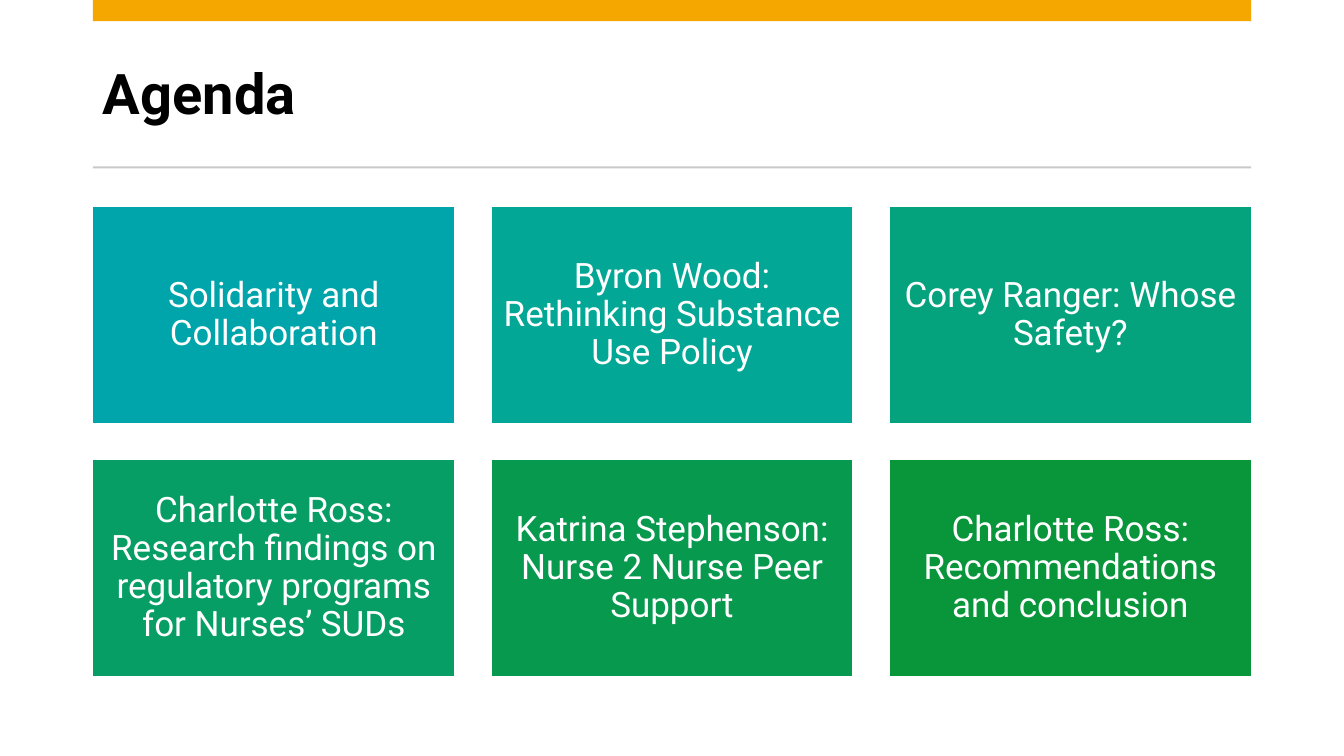
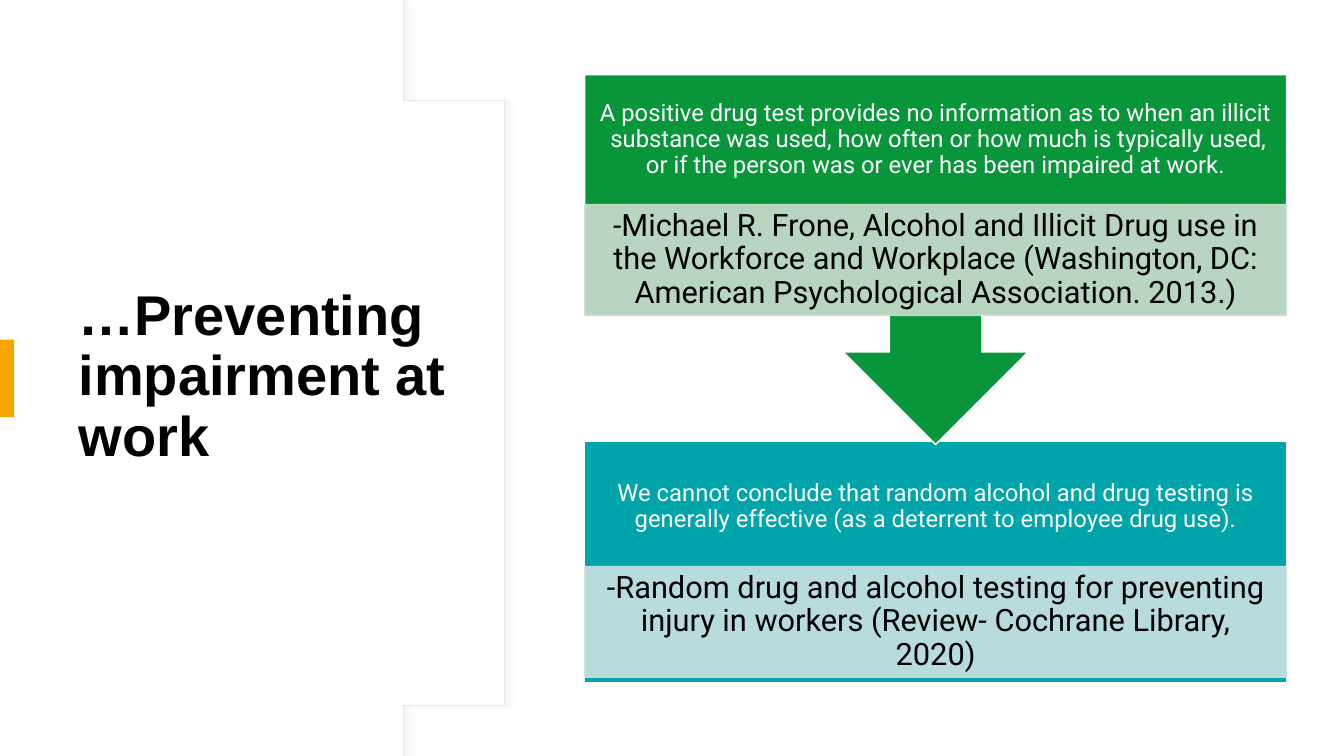
from dataclasses import dataclass

from lxml import etree
from pptx import Presentation
from pptx import util as u
from pptx.dml.color import RGBColor
from pptx.enum import shapes, text
from pptx.oxml import ns


@dataclass(frozen=True)
class Theme:
    white: str = "FFFFFF"
    ink: str = "000000"
    accent: str = "F5A700"
    rule: str = "C9C9C9"
    outline: str = "E9E9E9"
    shadow: str = "D9D9D9"
    teal: str = "00A5AB"
    green: str = "09963B"
    pale_teal: str = "CCE1E2"
    pale_green: str = "CCDDCE"
    body_font: str = "Roboto"
    title_font: str = "Arial"
    title_size: int = 40
    card_size: int = 25
    source_size: int = 22
    claim_size: int = 17
    spacing: float = 0.9


@dataclass(frozen=True)
class Box:
    left: float
    top: float
    width: float
    height: float

    def inches(self) -> tuple:
        return tuple(u.Inches(n) for n in (self.left, self.top, self.width, self.height))


@dataclass(frozen=True)
class Grid:
    left: float
    top: float
    width: float
    height: float
    gap: float
    columns: int

    def cell(self, index: int) -> Box:
        row, column = divmod(index, self.columns)
        return Box(
            self.left + column * (self.width + self.gap),
            self.top + row * (self.height + self.gap),
            self.width,
            self.height,
        )


@dataclass(frozen=True)
class Run:
    words: str
    italic: bool = False


@dataclass(frozen=True)
class Card:
    words: str
    fill: str


@dataclass(frozen=True)
class Panel:
    preset: shapes.MSO_SHAPE
    rotation: int
    top: float
    height: float
    source_top: float
    fill: str
    pale: str
    claim: str
    source: tuple


THEME = Theme()
WIDTH, HEIGHT = 13.33, 7.5
MARGIN, CONTENT = 0.92, 11.49
CARD_GRID = Grid(MARGIN, 2.05, 3.59, 2.15, 0.36, 3)
PANEL_LEFT, PANEL_WIDTH = 5.8, 6.96
CLAIM_HEIGHT, SOURCE_HEIGHT = 1.29, 1.1

CARDS = (
    Card("Solidarity and Collaboration", THEME.teal),
    Card("Byron Wood: Rethinking Substance Use Policy", "02A796"),
    Card("Corey Ranger: Whose Safety?", "04A27D"),
    Card("Charlotte Ross: Research findings on regulatory programs for Nurses’ SUDs", "069E65"),
    Card("Katrina Stephenson: Nurse 2 Nurse Peer Support", "079A4F"),
    Card("Charlotte Ross: Recommendations and conclusion", THEME.green),
)

PANELS = (
    Panel(
        shapes.MSO_SHAPE.RECTANGLE, 0, 4.38, 2.39, 5.62, THEME.teal, THEME.pale_teal,
        "We cannot conclude that random alcohol and drug testing is generally effective "
        "(as a deterrent to employee drug use).",
        (Run("-Random drug and alcohol testing for preventing injury in workers "
             "(Review- Cochrane Library, 2020)"),),
    ),
    Panel(
        shapes.MSO_SHAPE.UP_ARROW_CALLOUT, 180, 0.74, 3.67, 2.03, THEME.green, THEME.pale_green,
        "A positive drug test provides no information as to when an illicit  substance was used, "
        "how often or how much is typically used, or if the person was or ever has been "
        "impaired at work.",
        (Run("-", True),
         Run("Michael R. Frone, Alcohol and Illicit Drug use in the Workforce and Workplace "
             "(Washington, DC: American Psychological Association. 2013.)")),
    ),
)


def rgb(value: str) -> RGBColor:
    return RGBColor.from_string(value)


def paint(shape, fill: str, line: str | None = None, weight: float = 1) -> None:
    shape.fill.solid()
    shape.fill.fore_color.rgb = rgb(fill)
    if line:
        shape.line.color.rgb = rgb(line)
        shape.line.width = u.Pt(weight)
    else:
        shape.line.fill.background()
    shape.shadow.inherit = False


def set_opacity(shape, percent: int) -> None:
    for color in shape.element.spPr.iter(ns.qn("a:srgbClr")):
        etree.SubElement(color, ns.qn("a:alpha"), val=str(percent * 1000))


def add_soft_shadow(shape) -> None:
    effects = shape.element.spPr.find(ns.qn("a:effectLst"))
    shadow = etree.SubElement(
        effects, ns.qn("a:outerShdw"),
        blurRad=str(u.Pt(4)), dist=str(u.Pt(3)), dir="0", algn="l", rotWithShape="0",
    )
    color = etree.SubElement(shadow, ns.qn("a:srgbClr"), val=THEME.shadow)
    etree.SubElement(color, ns.qn("a:alpha"), val="30000")


def add_block(slide, box: Box, fill: str, line: str | None = None,
              preset: shapes.MSO_SHAPE = shapes.MSO_SHAPE.RECTANGLE):
    shape = slide.shapes.add_shape(preset, *box.inches())
    paint(shape, fill, line)
    return shape


def write(shape, runs: tuple, size: int, color: str, font: str = THEME.body_font,
          inset: tuple = (0.1, 0.1), align: text.PP_ALIGN = text.PP_ALIGN.CENTER,
          bold: bool = False) -> None:
    frame = shape.text_frame
    frame.word_wrap = True
    frame.auto_size = text.MSO_AUTO_SIZE.NONE
    frame.vertical_anchor = text.MSO_ANCHOR.MIDDLE
    frame.margin_left = frame.margin_right = u.Inches(inset[0])
    frame.margin_top = frame.margin_bottom = u.Inches(inset[1])
    paragraph = frame.paragraphs[0]
    paragraph.alignment = align
    paragraph.line_spacing = THEME.spacing
    for part in runs:
        run = paragraph.add_run()
        run.text = part.words
        run.font.name = font
        run.font.size = u.Pt(size)
        run.font.bold = bold
        run.font.italic = part.italic
        run.font.color.rgb = rgb(color)


def add_title(slide, words: str, box: Box, font: str) -> None:
    title = slide.shapes.title
    title.left, title.top, title.width, title.height = box.inches()
    write(title, (Run(words),), THEME.title_size, THEME.ink, font,
          (0.1, 0.05), text.PP_ALIGN.LEFT, True)
    title.element.getparent().append(title.element)


def curve(start: tuple, first: tuple, second: tuple, end: tuple, steps: int = 40) -> list:
    points = []
    for step in range(1, steps + 1):
        t = step / steps
        weights = ((1 - t) ** 3, 3 * t * (1 - t) ** 2, 3 * t * t * (1 - t), t ** 3)
        corners = (start, first, second, end)
        points.append(tuple(sum(w * c[axis] for w, c in zip(weights, corners)) for axis in (0, 1)))
    return points


def add_arc_field(slide) -> None:
    middle = HEIGHT / 2
    shoulder, peak = (4.01, 0.08), (5.27, middle)
    upper = [(3.94, 0), shoulder, *curve(shoulder, (4.79, 1.02), (5.27, 2.32), peak)]
    lower = [(x, HEIGHT - y) for x, y in reversed(upper[:-1])]
    builder = slide.shapes.build_freeform(0, 0, scale=float(u.Inches(1)))
    builder.add_line_segments([*upper, *lower, (0, HEIGHT)], close=True)
    field = builder.convert_to_shape()
    paint(field, THEME.white, THEME.outline, 0.75)
    add_soft_shadow(field)


def add_panel(slide, panel: Panel) -> None:
    frame = Box(PANEL_LEFT, panel.top, PANEL_WIDTH, panel.height)
    add_block(slide, frame, panel.fill, THEME.white, panel.preset).rotation = panel.rotation
    claim_box = Box(PANEL_LEFT, panel.top, PANEL_WIDTH, CLAIM_HEIGHT)
    claim = slide.shapes.add_textbox(*claim_box.inches())
    write(claim, (Run(panel.claim),), THEME.claim_size, THEME.white, inset=(0.13, 0.13))
    source_box = Box(PANEL_LEFT, panel.source_top, PANEL_WIDTH, SOURCE_HEIGHT)
    source = add_block(slide, source_box, panel.pale, panel.pale)
    set_opacity(source, 90)
    write(source, panel.source, THEME.source_size, THEME.ink, inset=(0.17, 0.03))


def build_agenda(slide) -> None:
    add_title(slide, "Agenda", Box(MARGIN, 0.37, CONTENT, 1.18), THEME.body_font)
    add_block(slide, Box(MARGIN, 0, CONTENT, 0.21), THEME.accent)
    add_block(slide, Box(MARGIN, 1.65, CONTENT, 0.02), THEME.rule)
    for index, card in enumerate(CARDS):
        block = add_block(slide, CARD_GRID.cell(index), card.fill, THEME.white)
        write(block, (Run(card.words),), THEME.card_size, THEME.white)


def build_prevention(slide) -> None:
    add_arc_field(slide)
    add_title(slide, "…Preventing impairment at work", Box(0.68, 1.27, 3.94, 4.95),
              THEME.title_font)
    add_block(slide, Box(0, 3.37, 0.14, 0.77), THEME.accent)
    for panel in PANELS:
        add_panel(slide, panel)


def main() -> None:
    presentation = Presentation()
    presentation.slide_width = u.Inches(WIDTH)
    presentation.slide_height = u.Inches(HEIGHT)
    title_only = presentation.slide_layouts[5]
    for build in (build_agenda, build_prevention):
        build(presentation.slides.add_slide(title_only))
    presentation.save("out.pptx")


if __name__ == "__main__":
    main()
